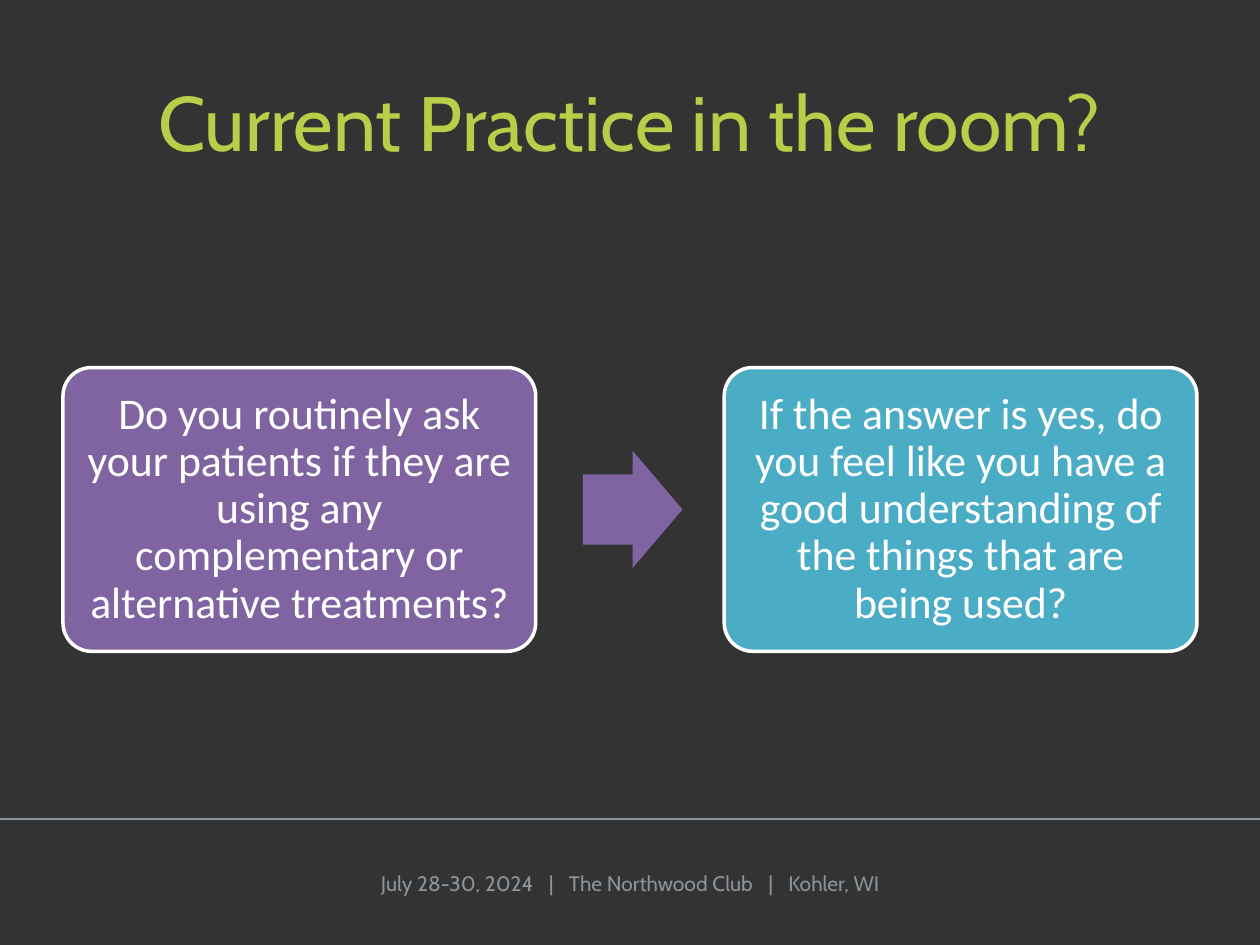
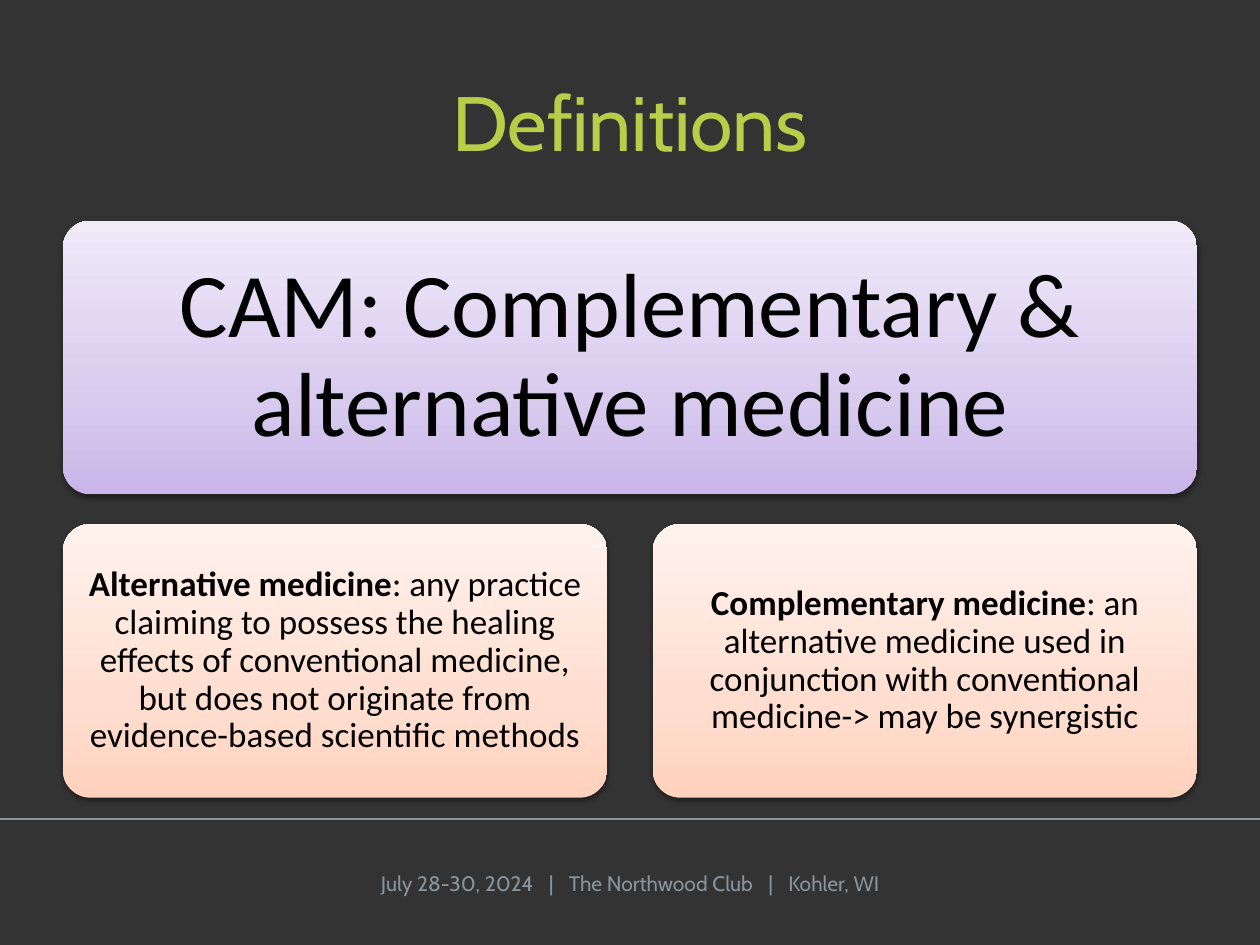
import collections
import copy

import lxml.etree
import pptx
import pptx.dml.color
import pptx.enum.shapes
import pptx.enum.text
import pptx.oxml.ns
import pptx.util

Cm = pptx.util.Cm
Pt = pptx.util.Pt
SHAPES = pptx.enum.shapes.MSO_SHAPE
CENTER = pptx.enum.text.PP_ALIGN.CENTER
MIDDLE = pptx.enum.text.MSO_ANCHOR.MIDDLE
qn = pptx.oxml.ns.qn

Box = collections.namedtuple("Box", "left top width height")

COLOURS = {
    "background": "333333",
    "title": "B8CE48",
    "footer": "8A949C",
    "purple": "8064A2",
    "teal": "4BACC6",
    "white": "FFFFFF",
    "black": "000000",
}
GRADIENTS = {
    "lilac": ["C9B5E8", "D8CBEE", "F0EAF9"],
    "peach": ["FFD2BD", "FFDED0", "FFF2ED"],
}
GRADIENT_POSITIONS = [0, 0.35, 1]
HEADING_FONT = "Cabin"
BODY_FONT = "Calibri"

SLIDE_WIDTH, SLIDE_HEIGHT = 25.4, 19.05
MARGIN = 1.27
CONTENT_WIDTH = SLIDE_WIDTH - 2 * MARGIN
TITLE_BOX = Box(MARGIN, 0.84, CONTENT_WIDTH, 3.18)
FOOTER_BOX = Box(6.99, 17.3, 11.43, 1.02)
RULE_TOP = 16.51
FOOTER_PARTS = ["July 28-30, 2024", "The Northwood Club", "Kohler, WI"]


def rgb(value):
    return pptx.dml.color.RGBColor.from_string(value)


def lengths(box):
    return [Cm(value) for value in box]


def style_font(font, name, size, colour):
    font.name = name
    font.size = Pt(size)
    font.color.rgb = rgb(COLOURS[colour])


def add_title(page, box, text):
    title = page.shapes.title
    title.left, title.top, title.width, title.height = lengths(box)
    frame = title.text_frame
    frame.text = text
    frame.auto_size = pptx.enum.text.MSO_AUTO_SIZE.NONE
    frame.vertical_anchor = MIDDLE
    para = frame.paragraphs[0]
    para.alignment = CENTER
    style_font(para.font, HEADING_FONT, 44, "title")


def add_footer(page, box):
    frame = page.shapes.add_textbox(*lengths(box)).text_frame
    frame.word_wrap = True
    frame.vertical_anchor = MIDDLE
    para = frame.paragraphs[0]
    para.alignment = CENTER
    for index, part in enumerate(FOOTER_PARTS):
        for text in ([" ", "|", " ", part] if index else [part]):
            span = para.add_run()
            span.text = text
            if text == " ":
                span.font._element.set("spc", "600")
    style_font(para.font, HEADING_FONT, 12, "footer")


def add_rule(page, top):
    rule = page.shapes.add_connector(
        pptx.enum.shapes.MSO_CONNECTOR.STRAIGHT,
        0, Cm(top), Cm(SLIDE_WIDTH), Cm(top))
    rule.line.color.rgb = rgb(COLOURS["footer"])
    rule.line.width = Pt(0.75)
    lxml.etree.SubElement(rule._element.spPr, qn("a:effectLst"))


def add_page(deck, title):
    page = deck.slides.add_slide(deck.slide_layouts[5])
    add_rule(page, RULE_TOP)
    add_title(page, TITLE_BOX, title)
    add_footer(page, FOOTER_BOX)
    return page


def add_card(page, box, spans, size, colour, inset):
    card = page.shapes.add_shape(SHAPES.ROUNDED_RECTANGLE, *lengths(box))
    card.adjustments[0] = 0.1
    card.shadow.inherit = False
    frame = card.text_frame
    frame.word_wrap = True
    frame.vertical_anchor = MIDDLE
    frame.margin_left = frame.margin_right = Cm(inset)
    frame.margin_top = frame.margin_bottom = Cm(inset)
    para = frame.paragraphs[0]
    para.alignment = CENTER
    para.line_spacing = 0.9
    for text, bold in spans:
        span = para.add_run()
        span.text = text
        span.font.bold = bold
    style_font(para.font, BODY_FONT, size, colour)
    return card


def add_question(page, box, text, colour):
    card = add_card(page, box, [(text, False)], 25, "white", 0.25)
    card.fill.solid()
    card.fill.fore_color.rgb = rgb(COLOURS[colour])
    card.line.color.rgb = rgb(COLOURS["white"])
    card.line.width = Pt(2)


def fill_gradient(shape, colours):
    shape.fill.gradient()
    shape.fill.gradient_angle = 90
    stop_list = shape._element.spPr.find(".//" + qn("a:gsLst"))
    stop_list.append(copy.deepcopy(stop_list[-1]))
    stops = zip(shape.fill.gradient_stops, colours, GRADIENT_POSITIONS)
    for stop, colour, position in stops:
        stop.color.rgb = rgb(colour)
        stop.position = position


def add_soft_shadow(shape):
    effects = shape._element.spPr.find(qn("a:effectLst"))
    shadow = lxml.etree.SubElement(
        effects, qn("a:outerShdw"), blurRad=str(Pt(3.1)), dist=str(Pt(1.6)),
        dir="5400000", rotWithShape="0")
    colour = lxml.etree.SubElement(
        shadow, qn("a:srgbClr"), val=COLOURS["black"])
    lxml.etree.SubElement(colour, qn("a:alpha"), val="38000")


def add_definition(page, box, spans, size, gradient, inset):
    card = add_card(page, box, spans, size, "black", inset)
    fill_gradient(card, GRADIENTS[gradient])
    card.line.fill.background()
    add_soft_shadow(card)


def add_arrow(page, box):
    arrow = page.shapes.add_shape(SHAPES.RIGHT_ARROW, *lengths(box))
    arrow.adjustments[0] = 0.6
    arrow.adjustments[1] = 0.5
    arrow.shadow.inherit = False
    arrow.fill.solid()
    arrow.fill.fore_color.rgb = rgb(COLOURS["purple"])
    arrow.line.fill.background()


def add_question_flow(page, box):
    card_width = 9.53
    questions = [
        ("Do you routinely ask your patients if they are using any "
         "complementary or alternative treatments?", "purple"),
        ("If the answer is yes, do you feel like you have a good "
         "understanding of the things that are being used?", "teal"),
    ]
    for index, (text, colour) in enumerate(questions):
        left = box.left + index * (box.width - card_width)
        add_question(page, Box(left, box.top, card_width, box.height),
                     text, colour)
    arrow_width, arrow_height = 2.01, 2.36
    add_arrow(page, Box(box.left + card_width + 0.95,
                        box.top + (box.height - arrow_height) / 2,
                        arrow_width, arrow_height))


def add_definition_tree(page, box):
    row_gap, column_gap = 0.6, 0.92
    card_height = (box.height - row_gap) / 2
    card_width = (box.width - column_gap) / 2
    add_definition(page, box._replace(height=card_height),
                   [("CAM: Complementary & alternative medicine", False)],
                   52, "lilac", 0.56)
    definitions = [
        ("Alternative medicine",
         ": any practice claiming to possess the healing effects of "
         "conventional medicine, but does not originate from "
         "evidence-based scientific methods"),
        ("Complementary medicine",
         ": an alternative medicine used in conjunction with conventional "
         "medicine-> may be synergistic"),
    ]
    for index, (term, meaning) in enumerate(definitions):
        card_box = Box(box.left + index * (card_width + column_gap),
                       box.top + card_height + row_gap,
                       card_width, card_height)
        add_definition(page, card_box, [(term, True), (meaning, False)],
                       20, "peach", 0.2)


def main():
    deck = pptx.Presentation()
    deck.slide_width = Cm(SLIDE_WIDTH)
    deck.slide_height = Cm(SLIDE_HEIGHT)
    background = deck.slide_master.background.fill
    background.solid()
    background.fore_color.rgb = rgb(COLOURS["background"])

    practice = add_page(deck, "Current Practice in the room?")
    add_question_flow(practice, Box(MARGIN, 7.41, CONTENT_WIDTH, 5.72))

    definitions = add_page(deck, "Definitions")
    add_definition_tree(definitions, Box(MARGIN, 4.45, CONTENT_WIDTH, 11.63))

    deck.save("out.pptx")


if __name__ == "__main__":
    main()
